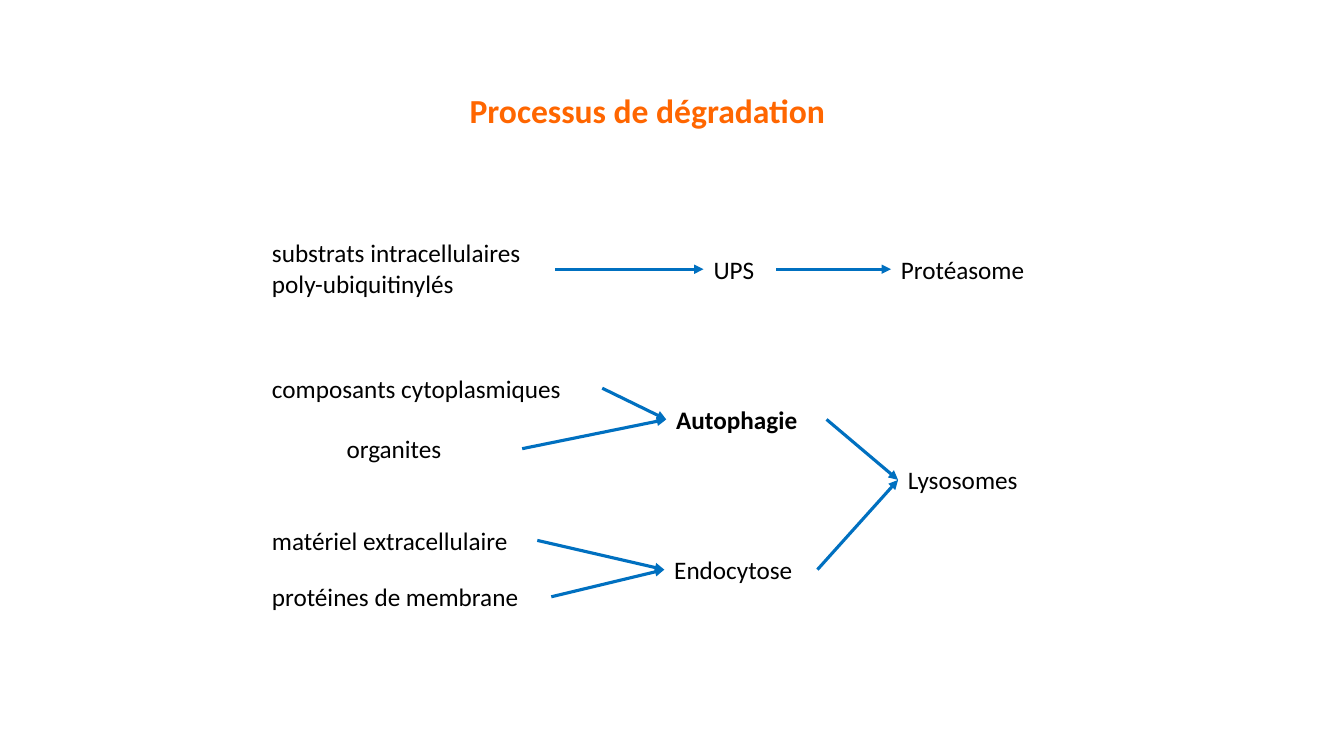
from lxml import etree
from pptx import Presentation
from pptx.dml.color import RGBColor
from pptx.enum.shapes import MSO_CONNECTOR
from pptx.oxml.ns import qn
from pptx.util import Pt

STRAIGHT = MSO_CONNECTOR.STRAIGHT
ORANGE = RGBColor(0xFF, 0x66, 0x00)
BLACK = RGBColor(0x00, 0x00, 0x00)
BLUE = RGBColor(0x00, 0x70, 0xC0)
LEFT_SIDE, RIGHT_SIDE = 1, 3
LINE_HEIGHT = 29
SOURCE_LEFT = 187.2

TITLE = ("Processus de dégradation", 328.3, 60.5, 317.5, 36)
TITLE_FORMAT = {"size": Pt(24), "bold": True}
LABEL_FORMAT = {"size": Pt(18), "bold": False}
EMPHASIS_FORMAT = {"size": Pt(18), "bold": True}

LABELS = {
    "substrates": ("substrats intracellulaires poly-ubiquitinylés", SOURCE_LEFT, 166.3, 209.5, 52),
    "components": ("composants cytoplasmiques", SOURCE_LEFT, 262.8, 243, LINE_HEIGHT),
    "organelles": ("organites", 240.5, 306, 132.5, LINE_HEIGHT),
    "material": ("matériel extracellulaire", SOURCE_LEFT, 371.5, 196.6, LINE_HEIGHT),
    "proteins": ("protéines de membrane", SOURCE_LEFT, 411.8, 206.6, LINE_HEIGHT),
    "ups": ("UPS", 502.6, 177.8, 51.8, LINE_HEIGHT),
    "autophagy": ("Autophagie", 475.9, 285.1, 114.5, LINE_HEIGHT),
    "endocytosis": ("Endocytose", 474.5, 392.4, 109.4, LINE_HEIGHT),
    "proteasome": ("Protéasome", 636.5, 177.8, 112.3, LINE_HEIGHT),
    "lysosomes": ("Lysosomes", 641.5, 328.3, 105.8, LINE_HEIGHT),
}
EMPHASIZED = {"autophagy"}
ARROWS = [
    ("substrates", "ups"),
    ("ups", "proteasome"),
    ("components", "autophagy"),
    ("organelles", "autophagy"),
    ("material", "endocytosis"),
    ("proteins", "endocytosis"),
    ("autophagy", "lysosomes"),
    ("endocytosis", "lysosomes"),
]


def add_label(slide, label, font_format, color):
    text, *box = label
    shape = slide.shapes.add_textbox(*map(Pt, box))
    shape.text_frame.word_wrap = True
    run = shape.text_frame.paragraphs[0].add_run()
    run.text = text
    run.font.name = "Calibri"
    run.font.color.rgb = color
    for name, value in font_format.items():
        setattr(run.font, name, value)
    return shape


def add_arrow(slide, start, end):
    connector = slide.shapes.add_connector(STRAIGHT, 0, 0, 0, 0)
    connector.begin_connect(start, RIGHT_SIDE)
    connector.end_connect(end, LEFT_SIDE)
    connector.line.color.rgb = BLUE
    connector.line.width = Pt(2.25)
    properties = connector.element.spPr
    etree.SubElement(properties.find(qn("a:ln")), qn("a:tailEnd"), type="triangle")
    etree.SubElement(properties, qn("a:effectLst"))


def main():
    presentation = Presentation()
    presentation.slide_width = Pt(960)
    presentation.slide_height = Pt(540)
    slide = presentation.slides.add_slide(presentation.slide_layouts[6])
    add_label(slide, TITLE, TITLE_FORMAT, ORANGE)
    shapes = {}
    for key, label in LABELS.items():
        font_format = EMPHASIS_FORMAT if key in EMPHASIZED else LABEL_FORMAT
        shapes[key] = add_label(slide, label, font_format, BLACK)
    for start, end in ARROWS:
        add_arrow(slide, shapes[start], shapes[end])
    presentation.save("out.pptx")


if __name__ == "__main__":
    main()
